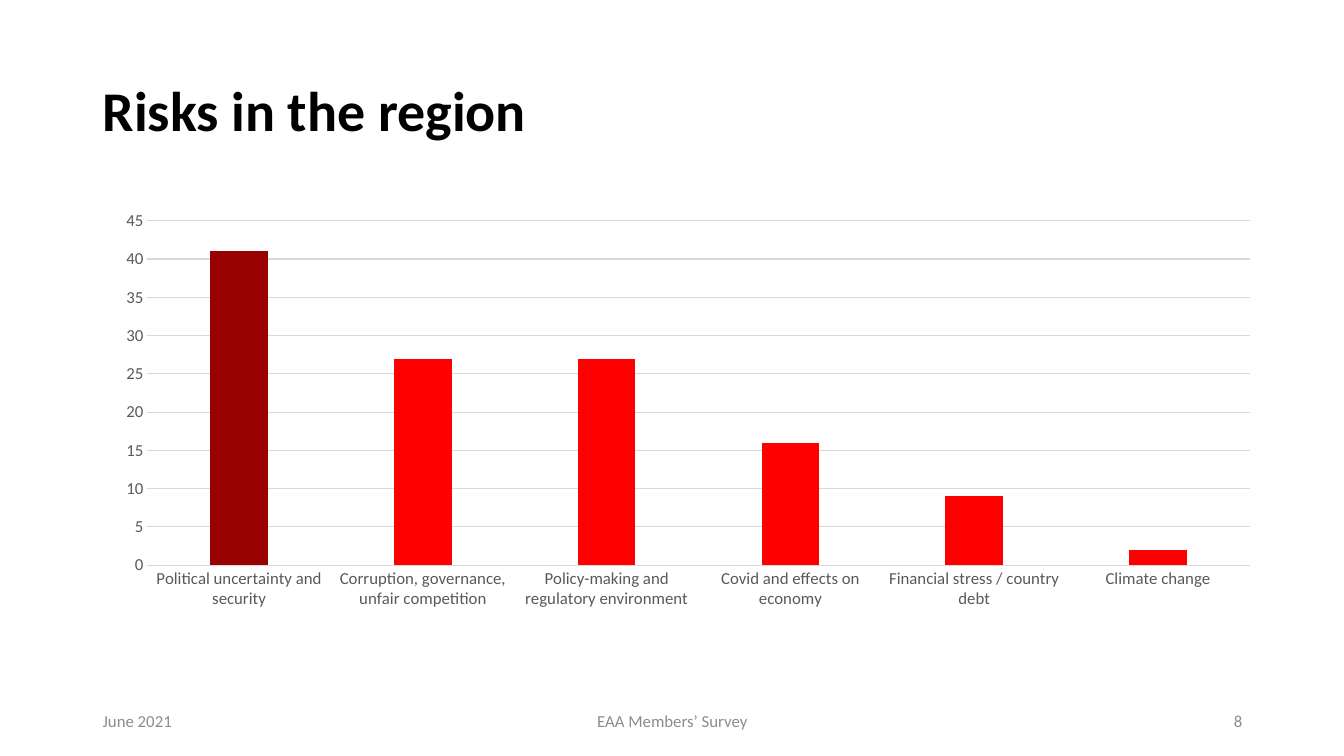
from lxml import etree
from pptx import Presentation
from pptx.chart.data import CategoryChartData
from pptx.dml.color import RGBColor
from pptx.enum.chart import XL_CHART_TYPE, XL_TICK_MARK
from pptx.enum.text import MSO_ANCHOR, PP_ALIGN
from pptx.oxml import parse_xml
from pptx.oxml.ns import nsdecls, qn
from pptx.util import Inches, Pt

FONT = "Calibri"
COLORS = {
    "title": "000000",
    "footer": "8C8C8C",
    "axis": "595959",
    "grid": "D9D9D9",
    "bar": "FF0000",
    "top_risk": "990000",
}
RISKS = {
    "Political uncertainty and security": 41,
    "Corruption, governance, unfair competition": 27,
    "Policy-making and regulatory environment": 27,
    "Covid and effects on economy": 16,
    "Financial stress / country debt": 9,
    "Climate change": 2,
}
LEFT = 0.92
FOOTER_TOP = 6.95
PLOT_AREA = {"x": 0.047, "y": 0.021, "w": 0.951, "h": 0.718}


def rgb(name):
    return RGBColor.from_string(COLORS[name])


def style_font(font, size, color, bold=False):
    font.name = FONT
    font.size = Pt(size)
    font.bold = bold
    font.color.rgb = rgb(color)


def add_text(slide, text, left, top, width, height, size, color,
             align=PP_ALIGN.LEFT, bold=False, line_spacing=None):
    box = slide.shapes.add_textbox(
        Inches(left), Inches(top), Inches(width), Inches(height))
    frame = box.text_frame
    frame.word_wrap = True
    frame.vertical_anchor = MSO_ANCHOR.MIDDLE
    paragraph = frame.paragraphs[0]
    paragraph.alignment = align
    paragraph.line_spacing = line_spacing
    run = paragraph.add_run()
    run.text = text
    style_font(run.font, size, color, bold)


def style_line(line, color):
    line.color.rgb = rgb(color)
    line.width = Pt(0.75)


def style_axis(axis):
    axis.major_tick_mark = XL_TICK_MARK.NONE
    axis.minor_tick_mark = XL_TICK_MARK.NONE
    style_font(axis.tick_labels.font, 12, "axis")


def set_plot_area(chart):
    """Fix the inner plot area as fractions of the chart frame."""
    plot_area = chart.plots[0]._element.getparent()
    for automatic in plot_area.findall(qn("c:layout")):
        plot_area.remove(automatic)
    layout = parse_xml(f"<c:layout {nsdecls('c')}><c:manualLayout/></c:layout>")
    settings = {"layoutTarget": "inner", "xMode": "edge", "yMode": "edge", **PLOT_AREA}
    for tag, value in settings.items():
        etree.SubElement(layout[0], qn(f"c:{tag}")).set("val", str(value))
    plot_area.insert(0, layout)


def add_risk_chart(slide):
    data = CategoryChartData()
    data.categories = list(RISKS)
    data.add_series("Series 1", list(RISKS.values()))
    chart = slide.shapes.add_chart(
        XL_CHART_TYPE.COLUMN_CLUSTERED, Inches(LEFT), Inches(2.09),
        Inches(11.5), Inches(4.76), data).chart
    style_font(chart.font, 10, "title")
    chart.has_title = False
    chart.has_legend = False

    for axis in (chart.category_axis, chart.value_axis):
        style_axis(axis)
    style_line(chart.category_axis.format.line, "grid")
    values = chart.value_axis
    values.minimum_scale, values.maximum_scale, values.major_unit = 0, 45, 5
    values.format.line.fill.background()
    style_line(values.major_gridlines.format.line, "grid")

    bars = chart.plots[0]
    bars.gap_width = 219
    bars.overlap = -27
    bars.vary_by_categories = False
    risks = bars.series[0]
    for part, color in ((risks, "bar"), (risks.points[0], "top_risk")):
        part.format.fill.solid()
        part.format.fill.fore_color.rgb = rgb(color)
    set_plot_area(chart)


def add_footer(slide):
    for text, left, width, align in (
        ("June 2021", LEFT, 3, PP_ALIGN.LEFT),
        ("EAA Members’ Survey", 4.42, 4.5, PP_ALIGN.CENTER),
        ("8", 9.42, 3, PP_ALIGN.RIGHT),
    ):
        add_text(slide, text, left, FOOTER_TOP, width, 0.4, 12, "footer", align)


def main():
    deck = Presentation()
    deck.slide_width = Inches(13.33)
    deck.slide_height = Inches(7.5)
    slide = deck.slides.add_slide(deck.slide_layouts[6])
    add_text(slide, "Risks in the region", LEFT, 0.4, 10.67, 1.45, 40, "title",
             bold=True, line_spacing=0.9)
    add_risk_chart(slide)
    add_footer(slide)
    deck.save("out.pptx")


if __name__ == "__main__":
    main()
